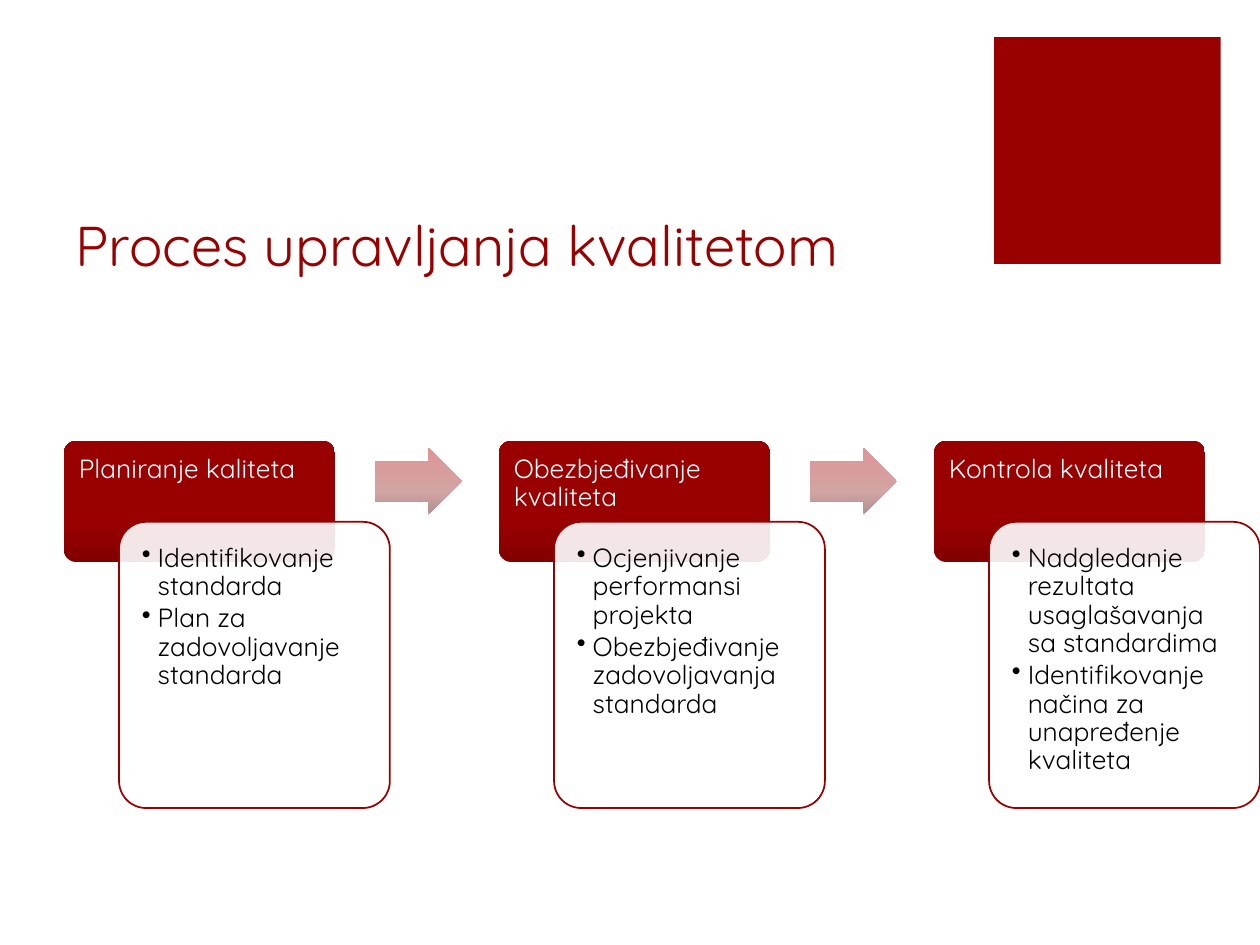
from lxml.etree import SubElement
from pptx import Presentation
from pptx.dml.color import RGBColor
from pptx.enum.shapes import MSO_SHAPE as Shape
from pptx.enum.text import MSO_ANCHOR as Anchor
from pptx.oxml.ns import qn
from pptx.util import Cm, Pt

# Content
TITLE = "Proces upravljanja kvalitetom"
STEPS = [
    ("Planiranje kaliteta",
     ["Identifikovanje standarda", "Plan za zadovoljavanje standarda"]),
    ("Obezbjeđivanje kvaliteta",
     ["Ocjenjivanje performansi projekta", "Obezbjeđivanje zadovoljavanja standarda"]),
    ("Kontrola kvaliteta",
     ["Nadgledanje rezultata usaglašavanja sa standardima",
      "Identifikovanje načina za unapređenje kvaliteta"]),
]

THEME = {
    "font": "Quicksand", "title_size": 32, "step_size": 15,
    "red": "990000", "white": "FFFFFF", "black": "000000",
    "header_stops": [(0, "830000"), (35, "990000"), (70, "990000"), (100, "990000")],
    "arrow_stops": [(0, "B09090"), (35, "D2A4A4"), (70, "D99C9C"), (100, "E19494")],
}

# Layout in centimetres
FIRST_LEFT, STEP_PITCH, BOX_WIDTH = 1.29, 8.77, 5.46
HEADER_TOP, HEADER_HEIGHT, HEADER_TEXT_HEIGHT = 8.89, 2.44, 1.63
DETAIL_SHIFT, DETAIL_HEIGHT = 1.11, 5.77
DETAIL_TOP = HEADER_TOP + HEADER_TEXT_HEIGHT
DETAIL_MARGIN = 0.16
ARROW_SHIFT, ARROW_WIDTH, ARROW_HEIGHT = 6.27, 1.75, 1.35
ARROW_TOP = HEADER_TOP + (HEADER_TEXT_HEIGHT - ARROW_HEIGHT) / 2
INSET, BULLET_INDENT = 0.3, 0.32


def add_box(page, kind, left, top, width, height, fill=None, stops=None,
            line=None, opacity=None, adjustments=()):
    box = page.shapes.add_shape(kind, Cm(left), Cm(top), Cm(width), Cm(height))
    box.shadow.inherit = False
    for index, value in enumerate(adjustments):
        box.adjustments[index] = value
    if stops:
        box.fill.gradient()
        box.fill.gradient_angle = 90
        stop_list = box.element.spPr.find(".//" + qn("a:gsLst"))
        stop_list.clear()
        for position, color in stops:
            stop = SubElement(stop_list, qn("a:gs"), pos=str(position * 1000))
            SubElement(stop, qn("a:srgbClr"), val=color)
    else:
        box.fill.solid()
        box.fill.fore_color.rgb = RGBColor.from_string(fill)
    if opacity:
        color = box.element.spPr.find(qn("a:solidFill")).find(qn("a:srgbClr"))
        SubElement(color, qn("a:alpha"), val=str(opacity * 1000))
    if line:
        box.line.color.rgb = RGBColor.from_string(line)
        box.line.width = Pt(1)
    else:
        box.line.fill.background()
    return box


def add_text(page, texts, left, top, width, height, *, size, color,
             insets=(0.25, 0.13, 0.25, 0.13), anchor=Anchor.TOP,
             line_spacing=1.0, space_after=0, bullet=False):
    box = page.shapes.add_textbox(Cm(left), Cm(top), Cm(width), Cm(height))
    frame = box.text_frame
    frame.word_wrap = True
    frame.vertical_anchor = anchor
    (frame.margin_left, frame.margin_top,
     frame.margin_right, frame.margin_bottom) = map(Cm, insets)
    for index, text in enumerate(texts):
        para = frame.add_paragraph() if index else frame.paragraphs[0]
        para.line_spacing = line_spacing
        para.space_after = Pt(space_after)
        if bullet:
            props = para._p.get_or_add_pPr()
            props.set("marL", str(Cm(BULLET_INDENT)))
            props.set("indent", str(-Cm(BULLET_INDENT)))
            SubElement(props, qn("a:buChar"), char="•")
        span = para.add_run()
        span.text = text
        span.font.name = THEME["font"]
        span.font.size = Pt(size)
        span.font.color.rgb = RGBColor.from_string(color)
    return box


def add_step(page, left, heading, points):
    # Header with its caption
    add_box(page, Shape.ROUNDED_RECTANGLE, left, HEADER_TOP, BOX_WIDTH, HEADER_HEIGHT,
            stops=THEME["header_stops"], adjustments=[0.1])
    add_text(page, [heading], left, HEADER_TOP, BOX_WIDTH, HEADER_TEXT_HEIGHT,
             size=THEME["step_size"], color=THEME["white"], line_spacing=0.9,
             insets=(INSET, INSET, INSET, INSET / 2))
    # Overlapping detail card with bullets
    detail_left = left + DETAIL_SHIFT
    add_box(page, Shape.ROUNDED_RECTANGLE, detail_left, DETAIL_TOP, BOX_WIDTH,
            DETAIL_HEIGHT, fill=THEME["white"], opacity=90, line=THEME["red"],
            adjustments=[0.1])
    add_text(page, points, detail_left + DETAIL_MARGIN, DETAIL_TOP + DETAIL_MARGIN,
             BOX_WIDTH - 2 * DETAIL_MARGIN, DETAIL_HEIGHT - 2 * DETAIL_MARGIN,
             size=THEME["step_size"], color=THEME["black"], insets=(INSET,) * 4,
             line_spacing=0.9, space_after=2.25, bullet=True)


def main():
    deck = Presentation()
    deck.slide_width, deck.slide_height = Cm(25.4), Cm(19.05)
    page = deck.slides.add_slide(deck.slide_layouts[6])

    # Corner square and title
    add_box(page, Shape.RECTANGLE, 20.04, 0.75, 4.57, 4.57, fill=THEME["red"])
    add_text(page, [TITLE], 1.27, 2.54, 18.08, 3.18, size=THEME["title_size"],
             color=THEME["red"], anchor=Anchor.BOTTOM)

    # Process steps, with an arrow between neighbours
    for index, (heading, points) in enumerate(STEPS):
        left = FIRST_LEFT + index * STEP_PITCH
        add_step(page, left, heading, points)
        if index < len(STEPS) - 1:
            add_box(page, Shape.RIGHT_ARROW, left + ARROW_SHIFT, ARROW_TOP,
                    ARROW_WIDTH, ARROW_HEIGHT, stops=THEME["arrow_stops"],
                    adjustments=[0.6, 0.5])

    deck.save("out.pptx")


if __name__ == "__main__":
    main()
